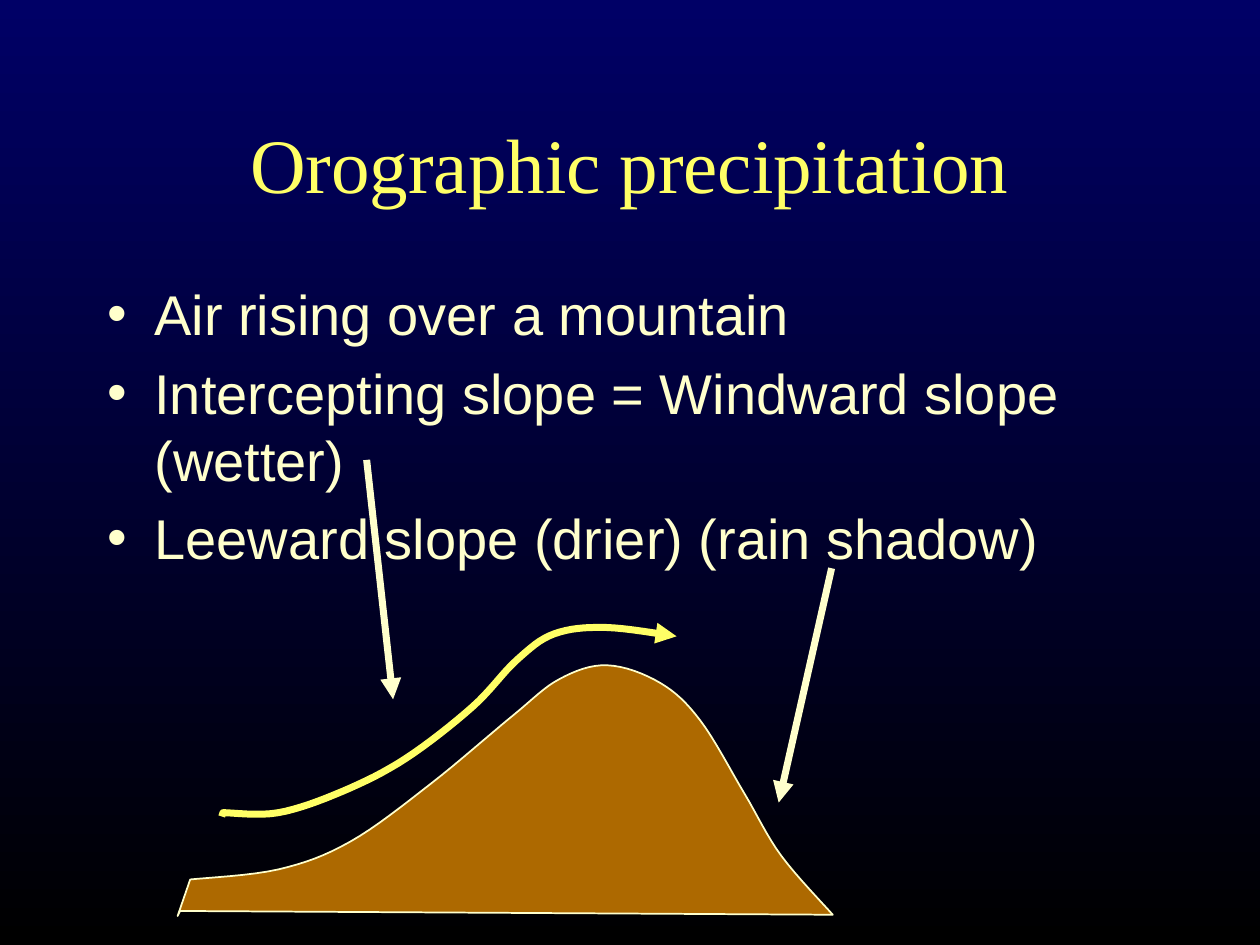
import pptx
import pptx.util
import pptx.dml.color
import pptx.enum.shapes
import pptx.enum.text
import pptx.oxml
import pptx.oxml.ns

TITLE = "Orographic precipitation"
POINTS = [
    "Air rising over a mountain",
    "Intercepting slope = Windward slope (wetter)",
    "Leeward slope (drier) (rain shadow)",
]

WINDWARD_SLOPE = [(1.51, 6.98), (2.21, 6.9), (2.78, 6.68), (3.42, 6.22), (4.07, 5.68), (4.44, 5.39)]
SUMMIT = (4.82, 5.28)
LEEWARD_SLOPE = [(5.24, 5.42), (5.56, 5.72), (5.91, 6.3), (6.2, 6.79), (6.61, 7.26)]
MOUNTAIN_BASE = [(1.43, 7.23), (1.41, 7.27)]

WIND_TAIL = (1.76, 6.48)
RISING_AIR = [(1.77, 6.45), (2.21, 6.45), (2.72, 6.28), (3.22, 6.02), (3.75, 5.61), (4.1, 5.24)]
AIR_OVER_SUMMIT = [(4.4, 5.03), (4.81, 4.98), (5.37, 5.05)]

SLOPE_ARROWS = {
    "windward": ((2.91, 3.65), (3.12, 5.55)),
    "leeward": ((6.6, 4.51), (6.18, 6.37)),
}
CURVE_STEPS = 8

THEME = {
    "sky": ("000066", "000000"), "yellow": "FFFF66", "cream": "FFFFCC", "earth": "AD6900",
    "title_font": "Times New Roman", "body_font": "Arial",
    "title_size": 44, "body_size": 32, "outline": 1, "arrow": 4,
}


def rgb(value):
    return pptx.dml.color.RGBColor.from_string(value)


def inches(values):
    return [pptx.util.Inches(value) for value in values]


def drawing_element(tag, attributes=""):
    return pptx.oxml.parse_xml(f'<a:{tag} {pptx.oxml.ns.nsdecls("a")} {attributes}/>')


def blend(before, start, end, after, t):
    slope_in, slope_out = (end - before) / 2, (after - start) / 2
    return (start + slope_in * t
            + (3 * (end - start) - 2 * slope_in - slope_out) * t ** 2
            + (2 * (start - end) + slope_in + slope_out) * t ** 3)


def smooth_curve(landmarks):
    padded = [landmarks[0], *landmarks, landmarks[-1]]
    curve = [landmarks[0]]
    for neighbours in zip(padded, padded[1:], padded[2:], padded[3:]):
        across, down = zip(*neighbours)
        for step in range(1, CURVE_STEPS + 1):
            t = step / CURVE_STEPS
            curve.append((blend(*across, t), blend(*down, t)))
    return curve


def write_text(placeholder, lines, at, font, size, color):
    placeholder.left, placeholder.top, placeholder.width, placeholder.height = inches(at)
    frame = placeholder.text_frame
    frame.auto_size = pptx.enum.text.MSO_AUTO_SIZE.NONE
    frame.text = "\n".join(lines)
    for para in frame.paragraphs:
        span = para.runs[0]
        span.font.name = font
        span.font.size = pptx.util.Pt(size)
        span.font.color.rgb = rgb(color)


def style_line(shape, color, width, arrow=False):
    shape.line.color.rgb = rgb(color)
    shape.line.width = pptx.util.Pt(width)
    if arrow:
        line = shape.element.find(".//" + pptx.oxml.ns.qn("a:ln"))
        line.append(drawing_element("tailEnd", 'type="triangle"'))


def add_outline(page, points, closed=False):
    start, *rest = [inches(point) for point in points]
    builder = page.shapes.build_freeform(*start)
    builder.add_line_segments(rest, close=closed)
    shape = builder.convert_to_shape()
    shape.shadow.inherit = False
    return shape


def add_arrow(page, start, end):
    arrow = page.shapes.add_connector(
        pptx.enum.shapes.MSO_CONNECTOR.STRAIGHT, *inches(start + end))
    style_line(arrow, THEME["cream"], THEME["arrow"], arrow=True)
    properties = arrow.element.find(pptx.oxml.ns.qn("p:spPr"))
    properties.append(drawing_element("effectLst"))


def paint_sky(page):
    sky = page.background.fill
    sky.gradient()
    sky.gradient_angle = 270
    for stop, color, position in zip(sky.gradient_stops, THEME["sky"], (0, 1)):
        stop.color.rgb = rgb(color)
        stop.position = position


def add_mountain(page):
    ridge = smooth_curve([*WINDWARD_SLOPE, SUMMIT, *LEEWARD_SLOPE])
    mountain = add_outline(page, ridge + MOUNTAIN_BASE, closed=True)
    mountain.fill.solid()
    mountain.fill.fore_color.rgb = rgb(THEME["earth"])
    style_line(mountain, THEME["cream"], THEME["outline"])


def add_wind(page):
    wind = add_outline(page, [WIND_TAIL, *smooth_curve(RISING_AIR + AIR_OVER_SUMMIT)])
    wind.fill.background()
    style_line(wind, THEME["yellow"], THEME["arrow"], arrow=True)


def main():
    deck = pptx.Presentation()
    deck.slide_width, deck.slide_height = inches((10, 7.5))
    page = deck.slides.add_slide(deck.slide_layouts[1])
    paint_sky(page)

    title, body = page.placeholders
    write_text(title, [TITLE], (0.75, 0.67, 8.5, 1.25), font=THEME["title_font"],
               size=THEME["title_size"], color=THEME["yellow"])
    write_text(body, POINTS, (0.75, 2.17, 8.5, 4.5), font=THEME["body_font"],
               size=THEME["body_size"], color=THEME["cream"])

    add_mountain(page)
    for start, end in SLOPE_ARROWS.values():
        add_arrow(page, start, end)
    add_wind(page)

    deck.save("out.pptx")


if __name__ == "__main__":
    main()
